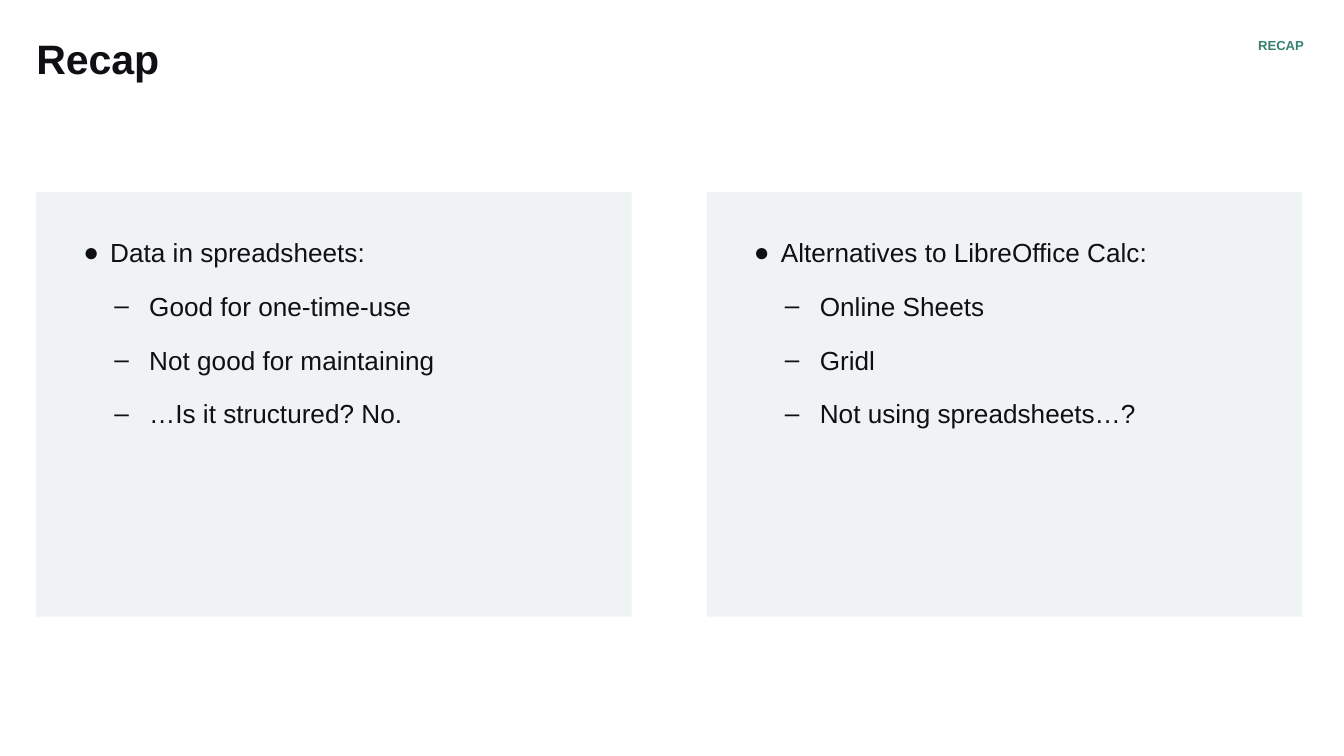
from lxml import etree
from pptx import Presentation, util as u
from pptx.dml.color import RGBColor
from pptx.enum import shapes, text
from pptx.oxml.ns import qn

INK = RGBColor(0x0F, 0x0F, 0x14)
GREEN = RGBColor(0x37, 0x81, 0x6E)
PALE = RGBColor(0xF0, 0xF3, 0xF3)

TITLE = "Recap"
LABEL = "RECAP"
CARDS = [
    ("Data in spreadsheets:",
     ["Good for one-time-use", "Not good for maintaining", "…Is it structured? No."]),
    ("Alternatives to LibreOffice Calc:",
     ["Online Sheets", "Gridl", "Not using spreadsheets…?"]),
]

WIDE = 10
HIGH = WIDE * 9 / 16
EDGE, TOP = 0.27, 0.29
CARD_Y, CARD_W, CARD_H = 1.43, 4.43, 3.16
STEP = 4.99
PAD_X, PAD_Y = 0.35, 0.23
# level: (bullet, left margin, hanging indent)
LEVELS = [("●", 0.2, -0.2), ("–", 0.49, -0.26)]


def style(para, size, color, bold=False):
    font = para.font
    font.name, font.size, font.bold = "Arial", u.Pt(size), bold
    font.color.rgb = color


def add_box(slide, x, y, w, h, insets):
    """Add a wrapping text box; insets run left, top, right, bottom."""
    box = slide.shapes.add_textbox(*map(u.Inches, (x, y, w, h)))
    frame = box.text_frame
    frame.word_wrap = True
    frame.vertical_anchor = text.MSO_ANCHOR.TOP
    (frame.margin_left, frame.margin_top,
     frame.margin_right, frame.margin_bottom) = map(u.Inches, insets)
    return frame


def add_head(slide, words, place, insets, size, color, align):
    para = add_box(slide, *place, insets).paragraphs[0]
    para.text, para.alignment, para.line_spacing = words, align, 0.9
    style(para, size, color, bold=True)


def add_bullet(para, level):
    mark, left, hang = LEVELS[level]
    para.level = level
    props = para._p.get_or_add_pPr()
    props.set("marL", str(u.Inches(left)))
    props.set("indent", str(u.Inches(hang)))
    tint = etree.SubElement(props, qn("a:buClr"))
    etree.SubElement(tint, qn("a:srgbClr"), val=str(INK))
    etree.SubElement(props, qn("a:buFont"), typeface="Arial")
    etree.SubElement(props, qn("a:buChar"), char=mark)


def add_card(slide, x, lead, points):
    card = slide.shapes.add_shape(
        shapes.MSO_SHAPE.RECTANGLE,
        *map(u.Inches, (x, CARD_Y, CARD_W, CARD_H)))
    card.shadow.inherit = False
    card.fill.solid()
    card.fill.fore_color.rgb = PALE
    card.line.fill.background()

    frame = add_box(slide, x + PAD_X, CARD_Y + PAD_Y, 3.72, 2.56,
                    (0, 0.1, 0.1, 0.1))
    for i, words in enumerate([lead, *points]):
        para = frame.add_paragraph() if i else frame.paragraphs[0]
        para.text = words
        add_bullet(para, min(i, 1))
        para.space_before = u.Pt(12 if i else 0)
        style(para, 14, INK)
    para.space_after = u.Pt(12)


def main():
    deck = Presentation()
    deck.slide_width, deck.slide_height = u.Inches(WIDE), u.Inches(HIGH)
    slide = deck.slides.add_slide(deck.slide_layouts[6])
    add_head(slide, TITLE, (EDGE, TOP, 7.99, 0.59), (0, 0, 0.1, 0.1),
             22, INK, text.PP_ALIGN.LEFT)
    for i, (lead, points) in enumerate(CARDS):
        add_card(slide, EDGE + i * STEP, lead, points)
    add_head(slide, LABEL, (7.57, TOP, 2.13, 0.16), (0, 0, 0, 0.1),
             7, GREEN, text.PP_ALIGN.RIGHT)
    deck.save("out.pptx")


if __name__ == "__main__":
    main()
